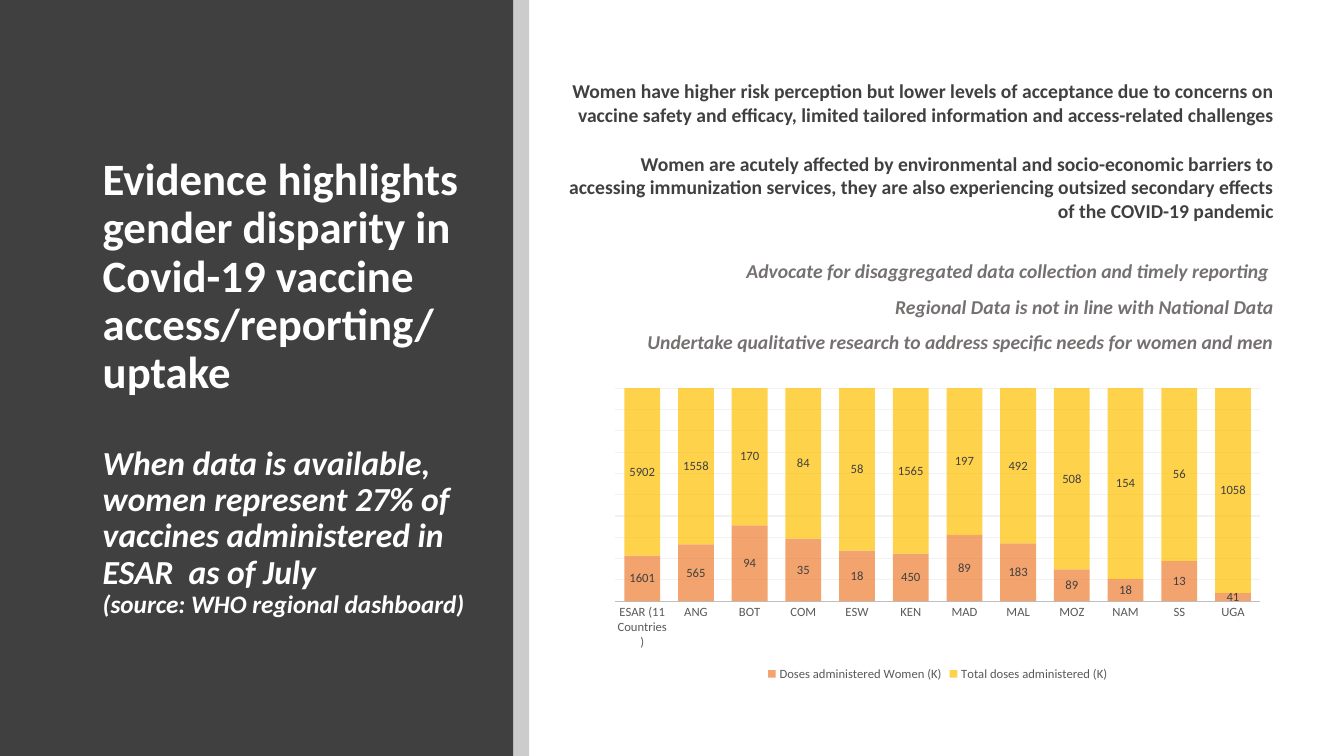
import dataclasses
import pptx
import pptx.chart.data
import pptx.dml.color
import pptx.enum.chart
import pptx.enum.shapes
import pptx.enum.text
import pptx.oxml
import pptx.oxml.ns
import pptx.util

Pt = pptx.util.Pt
ALIGN = pptx.enum.text.PP_ALIGN


@dataclasses.dataclass(frozen=True)
class Theme:
    face: str = "Calibri"
    dark: str = "404040"
    white: str = "FFFFFF"
    black: str = "000000"
    mute: str = "767171"
    label: str = "595959"
    axis: str = "BFBFBF"
    grid: str = "F2F2F2"
    women: str = "ED7D31"
    total: str = "FFC000"
    head: int = 32
    lead: int = 24
    source: int = 18
    body: int = 14
    small: int = 9


class Deck:
    def __init__(self, theme):
        self.theme = theme
        self.file = pptx.Presentation()
        self.file.slide_width, self.file.slide_height = Pt(960), Pt(540)
        self.slide = self.file.slides.add_slide(self.file.slide_layouts[5])

    def color(self, name):
        return pptx.dml.color.RGBColor.from_string(name)

    def style(self, font, size, color, bold=False, slant=False):
        font.name = self.theme.face
        font.size = Pt(size)
        font.bold = bold
        font.italic = slant
        font.color.rgb = self.color(color)

    def fade(self, node, share):
        for tint in node.xpath("./*/a:solidFill/a:srgbClr"):
            alpha = pptx.oxml.parse_xml(
                f'<a:alpha {pptx.oxml.ns.nsdecls("a")} val="{share * 1000}"/>')
            tint.append(alpha)

    def panel(self, left, width, color, share=100):
        shape = self.slide.shapes.add_shape(
            pptx.enum.shapes.MSO_SHAPE.RECTANGLE, Pt(left), Pt(0), Pt(width), Pt(540))
        shape.shadow.inherit = False
        shape.fill.solid()
        shape.fill.fore_color.rgb = self.color(color)
        shape.line.fill.background()
        if share < 100:
            self.fade(shape.element, share)

    def text(self, frame, index, lines, size, color, align, slant=False):
        para = frame.paragraphs[0] if index == 0 else frame.add_paragraph()
        para.alignment = align
        for row, words in enumerate(lines):
            if row:
                para.add_line_break()
            run = para.add_run()
            run.text = words
            self.style(run.font, size, color, True, slant)
        return para

    def title(self, box, parts):
        shape = self.slide.shapes.title
        shape.left, shape.top, shape.width, shape.height = map(Pt, box)
        shape.element.getparent().append(shape.element)
        frame = shape.text_frame
        frame.word_wrap = True
        frame.auto_size = pptx.enum.text.MSO_AUTO_SIZE.NONE
        frame.vertical_anchor = pptx.enum.text.MSO_ANCHOR.MIDDLE
        for index, (lines, size, slant, gap) in enumerate(parts):
            para = self.text(frame, index, lines, size, self.theme.white,
                             ALIGN.LEFT, slant)
            para.line_spacing = 0.9
            para.space_before = Pt(gap)
            para.space_after = Pt(0)

    def table(self, box, heights, cells):
        grid = self.slide.shapes.add_table(len(cells), 1, *map(Pt, box)).table
        grid.first_row = grid.horz_banding = False
        for row, (height, (facts, asks)) in enumerate(zip(heights, cells)):
            grid.rows[row].height = Pt(height)
            cell = grid.cell(row, 0)
            cell.fill.background()
            cell.margin_left, cell.margin_right = Pt(13.5), Pt(20)
            cell.margin_top = cell.margin_bottom = Pt(6.5)
            for index, words in enumerate(facts + asks):
                ask = index >= len(facts)
                para = self.text(
                    cell.text_frame, index, [words], self.theme.body,
                    self.theme.mute if ask else self.theme.dark, ALIGN.RIGHT, ask)
                if ask:
                    para.line_spacing = 1.5
                if index == len(facts):
                    para.space_before = Pt(17)

    def chart(self, box, names, bars):
        kinds, theme = pptx.enum.chart, self.theme
        data = pptx.chart.data.CategoryChartData()
        data.categories = names
        for name, values, color in bars:
            data.add_series(name, values)
        chart = self.slide.shapes.add_chart(
            kinds.XL_CHART_TYPE.COLUMN_STACKED_100, *map(Pt, box), data).chart
        chart.has_title = False
        self.style(chart.font, theme.small, theme.label)
        chart.has_legend = True
        chart.legend.position = kinds.XL_LEGEND_POSITION.BOTTOM
        chart.legend.include_in_layout = False
        self.style(chart.legend.font, theme.small, theme.label)
        base = chart.category_axis
        base.major_tick_mark = kinds.XL_TICK_MARK.NONE
        base.format.line.width = Pt(0.75)
        base.format.line.color.rgb = self.color(theme.axis)
        self.style(base.tick_labels.font, theme.small, theme.label)
        scale = chart.value_axis
        scale.visible = False
        scale.major_gridlines.format.line.width = Pt(0.75)
        scale.major_gridlines.format.line.color.rgb = self.color(theme.grid)
        plot = chart.plots[0]
        plot.gap_width, plot.overlap = 50, 100
        plot.vary_by_categories = False
        for band, (name, values, color) in zip(plot.series, bars):
            band.format.fill.solid()
            band.format.fill.fore_color.rgb = self.color(color)
            marks = band.data_labels
            marks.show_value = True
            marks.position = kinds.XL_LABEL_POSITION.CENTER
            self.style(marks.font, theme.small, theme.dark)
        for node in chart.element.xpath(".//c:ser"):
            self.fade(node, 70)


def main():
    theme = Theme()
    deck = Deck(theme)
    deck.panel(0, 366.5, theme.dark)
    deck.panel(366.5, 11.5, theme.black, 20)
    deck.table((393, 50.4, 537, 225), (52, 173), [
        (["Women have higher risk perception but lower levels of acceptance due to concerns on",
          "vaccine safety and efficacy, limited tailored information and access-related challenges"],
         []),
        (["Women are acutely affected by environmental and socio-economic barriers to "
          "accessing immunization services, they are also experiencing outsized secondary "
          "effects of the COVID-19 pandemic"],
         ["Advocate for disaggregated data collection and timely reporting ",
          "Regional Data is not in line with National Data",
          "Undertake qualitative research to address specific needs for women and men"]),
    ])
    deck.chart(
        (430, 273, 479.5, 216.5),
        ["ESAR (11 Countries)", "ANG", "BOT", "COM", "ESW", "KEN",
         "MAD", "MAL", "MOZ", "NAM", "SS", "UGA"],
        [("Doses administered Women (K)",
          (1601, 565, 94, 35, 18, 450, 89, 183, 89, 18, 13, 41), theme.women),
         ("Total doses administered (K)",
          (5902, 1558, 170, 84, 58, 1565, 197, 492, 508, 154, 56, 1058), theme.total)])
    deck.title((66.2, 64, 292.3, 425.5), [
        (["Evidence highlights gender disparity in Covid-19 vaccine access/reporting/",
          "uptake"], theme.head, False, 0),
        (["When data is available, women represent 27% of vaccines administered in "
          "ESAR  as of July"], theme.lead, True, 34),
        (["(source: WHO regional dashboard)"], theme.source, True, 0),
    ])
    deck.file.save("out.pptx")


if __name__ == "__main__":
    main()
